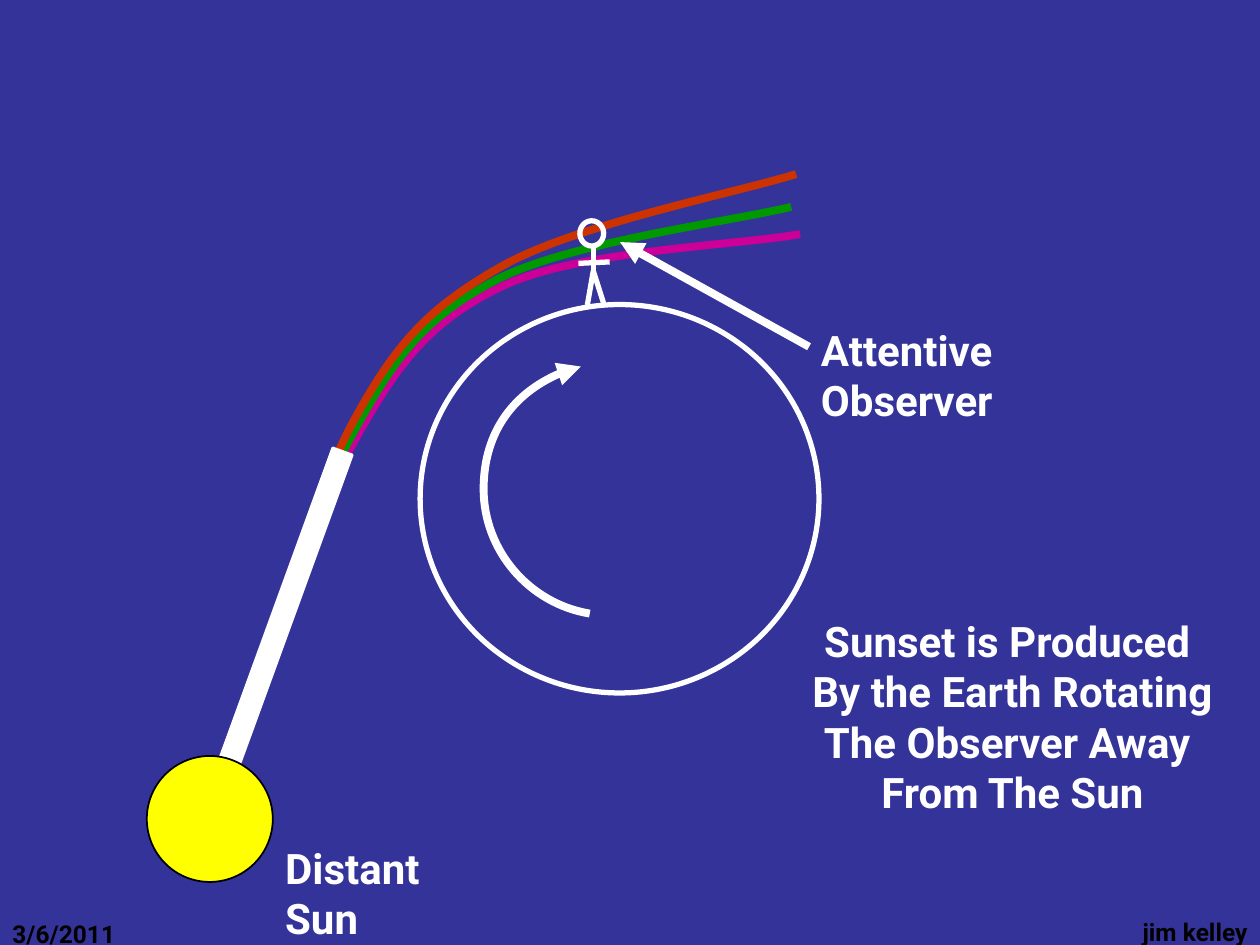
"""Build a slide showing how the Earth's rotation produces a sunset."""
from pptx import Presentation
from pptx import util as u
from pptx.dml import color
from pptx.enum import shapes, text
from pptx.oxml import ns
from lxml import etree

COLORS = {
    "sky": "333399", "white": "FFFFFF", "black": "000000", "sun": "FFFF00",
    "magenta": "CC0099", "green": "009900", "orange": "CC3300",
}


def style(shape, line, width, fill=None, arrow=False):
    shape.line.color.rgb = color.RGBColor.from_string(COLORS[line])
    shape.line.width = u.Pt(width)
    if fill:
        shape.fill.solid()
        shape.fill.fore_color.rgb = color.RGBColor.from_string(COLORS[fill])
    elif hasattr(shape, "fill"):
        shape.fill.background()
    if arrow:
        outline = shape._element.spPr.find(ns.qn("a:ln"))
        etree.SubElement(outline, ns.qn("a:tailEnd"), type="triangle")
    etree.SubElement(shape._element.spPr, ns.qn("a:effectLst"))


def curve(points):
    start, *rest = [(u.Cm(x), u.Cm(y)) for x, y in points]
    builder = slide.shapes.build_freeform(*start)
    builder.add_line_segments(rest, close=False)
    shape = builder.convert_to_shape()
    segments = list(shape._element.iter(ns.qn("a:lnTo")))
    for first in range(0, len(segments), 3):
        bezier = segments[first]
        bezier.tag = ns.qn("a:cubicBezTo")
        for segment in segments[first + 1:first + 3]:
            bezier.append(segment[0])
            segment.getparent().remove(segment)
    return shape


deck = Presentation()
deck.slide_width, deck.slide_height = u.Cm(25.4), u.Cm(19.05)
slide = deck.slides.add_slide(deck.slide_layouts[6])
slide.background.fill.solid()
slide.background.fill.fore_color.rgb = color.RGBColor.from_string(COLORS["sky"])

rays = {
    "magenta": [(4.65, 15.67), (5.05, 14.55), (6.17, 10.64), (7.09, 8.99), (8, 7.34),
                (8.64, 6.48), (10.13, 5.77), (11.63, 5.05), (14.86, 4.95), (16.13, 4.72)],
    "green": [(4.65, 15.34), (5.05, 14.25), (6.17, 10.46), (7.06, 8.84), (7.95, 7.21),
              (8.51, 6.43), (10.01, 5.64), (11.48, 4.88), (14.73, 4.47), (15.95, 4.17)],
    "orange": [(4.78, 15.27), (5.16, 14.15), (6.2, 10.21), (7.09, 8.56), (7.98, 6.91),
               (8.64, 6.2), (10.13, 5.36), (11.63, 4.52), (14.83, 3.89), (16.05, 3.51)],
}
for hue, points in rays.items():
    style(curve(points), hue, 4.5)

rotation = [(11.89, 12.37), (10.67, 12.17), (9.75, 11.1), (9.75, 9.86),
            (9.75, 8.69), (10.57, 7.65), (11.71, 7.39)]
style(curve(rotation), "white", 4.5, arrow=True)

hip = (11.96, 5.46)
strokes = [
    ((11.96, 4.95), hip, 3, False),
    (hip, (12.17, 6.12), 3, False),
    (hip, (11.84, 6.15), 3, False),
    ((12.29, 5.28), (11.66, 5.31), 3, False),
    ((16.31, 6.99), (12.5, 4.88), 4.5, True),
]
for start, end, width, arrow in strokes:
    stroke = slide.shapes.add_connector(
        shapes.MSO_CONNECTOR.STRAIGHT, *(u.Cm(v) for v in start + end))
    style(stroke, "white", width, arrow=arrow)

OVAL, RECTANGLE = shapes.MSO_SHAPE.OVAL, shapes.MSO_SHAPE.RECTANGLE
bodies = [
    (OVAL, (11.69, 4.45, 0.48, 0.51), 357.5, "white", 3, None),
    (OVAL, (8.47, 6.14, 8.04, 7.83), 0, "white", 3, None),
    (RECTANGLE, (5.5, 8.89, 0.42, 6.99), 20, "white", 1.5, "white"),
    (OVAL, (2.96, 15.24, 2.54, 2.54), 0, "black", 1, "sun"),
]
for kind, box, angle, line, width, fill in bodies:
    body = slide.shapes.add_shape(kind, *(u.Cm(v) for v in box))
    body.rotation = angle
    style(body, line, width, fill)

LEFT, CENTER, RIGHT = text.PP_ALIGN.LEFT, text.PP_ALIGN.CENTER, text.PP_ALIGN.RIGHT
labels = [
    ("3/6/2011", (0, 18.4, 5.92, 1.32), 14, "black", LEFT, True),
    ("jim kelley", (17.35, 18.36, 8.05, 1.32), 14, "black", RIGHT, True),
    ("Distant Sun", (5.5, 16.86, 4.5, 1.27), 24, "white", LEFT, True),
    ("Attentive Observer", (16.3, 6.41, 7.2, 1.27), 24, "white", LEFT, True),
    ("Sunset is Produced \nBy the Earth Rotating\nThe Observer Away \nFrom The Sun",
     (16.09, 12.28, 8.64, 4.32), 24, "white", CENTER, False),
]
for words, box, size, hue, align, wrap in labels:
    frame = slide.shapes.add_textbox(*(u.Cm(v) for v in box)).text_frame
    frame.word_wrap = wrap
    frame.text = words
    for paragraph in frame.paragraphs:
        paragraph.alignment = align
        paragraph.font.name = "Roboto"
        paragraph.font.size = u.Pt(size)
        paragraph.font.bold = True
        paragraph.font.color.rgb = color.RGBColor.from_string(COLORS[hue])

deck.save("out.pptx")
